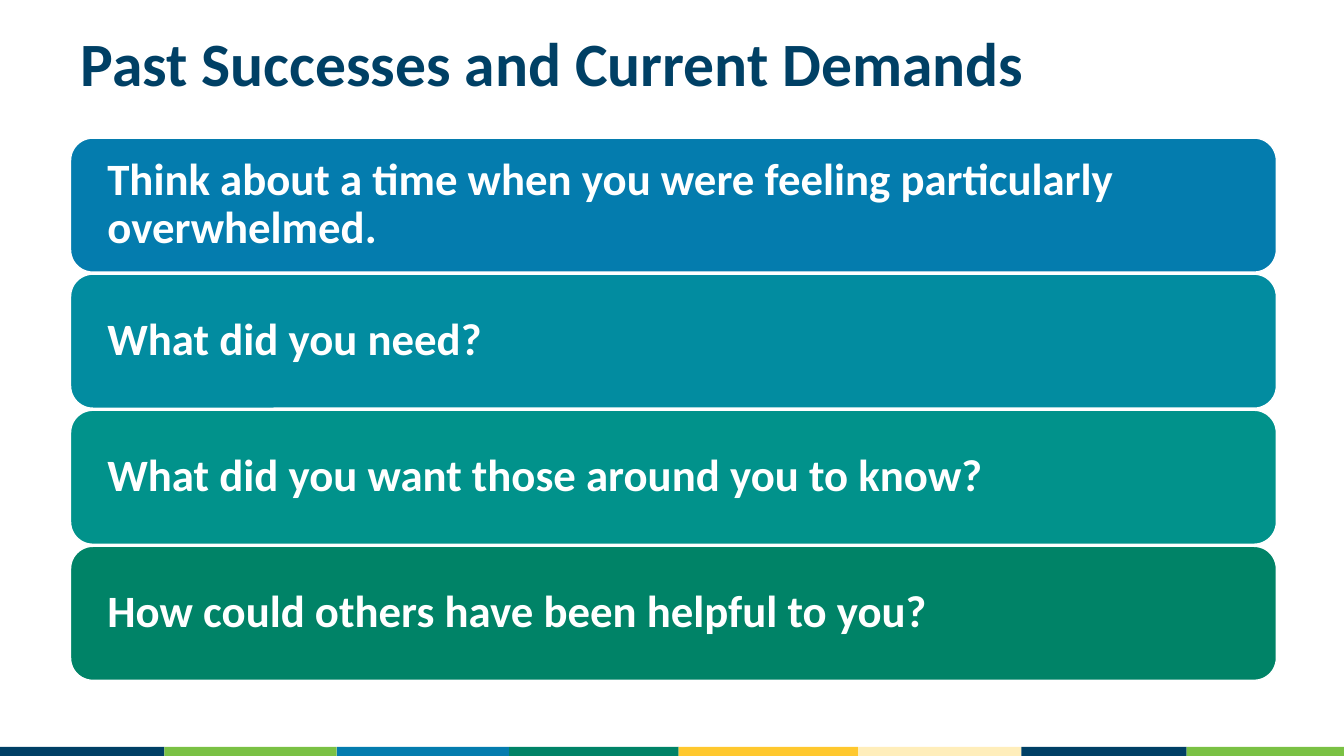
from dataclasses import dataclass

from pptx import Presentation
from pptx.dml.color import RGBColor
from pptx.enum.shapes import MSO_SHAPE
from pptx.enum.text import MSO_ANCHOR, PP_ALIGN
from pptx.util import Inches, Pt


@dataclass(frozen=True)
class Theme:
    font: str = "Calibri"
    title_size: int = 44
    prompt_size: int = 32
    navy: str = "004065"
    lime: str = "7AC144"
    blue: str = "047CAE"
    teal_blue: str = "028CA0"
    teal: str = "01928B"
    green: str = "008367"
    gold: str = "FFC82E"
    cream: str = "FFEEBB"
    white: str = "FFFFFF"


THEME = Theme()

PROMPTS = [
    ("Think about a time when you were feeling particularly overwhelmed.", THEME.blue),
    ("What did you need?", THEME.teal_blue),
    ("What did you want those around you to know?", THEME.teal),
    ("How could others have been helpful to you?", THEME.green),
]

STRIPES = [
    (0, THEME.navy),
    (1.63, THEME.lime),
    (3.34, THEME.blue),
    (5.05, THEME.green),
    (6.73, THEME.gold),
    (8.51, THEME.cream),
    (10.13, THEME.navy),
    (11.77, THEME.lime),
]


def write_text(sp, text, *, size, color, inset_x=0.1, inset_y=0.05):
    tf = sp.text_frame
    tf.word_wrap = True
    tf.vertical_anchor = MSO_ANCHOR.MIDDLE
    tf.margin_left = tf.margin_right = Inches(inset_x)
    tf.margin_top = tf.margin_bottom = Inches(inset_y)
    p = tf.paragraphs[0]
    p.alignment = PP_ALIGN.LEFT
    p.line_spacing = 0.9
    r = p.add_run()
    r.text = text
    r.font.name = THEME.font
    r.font.size = Pt(size)
    r.font.bold = True
    r.font.color.rgb = RGBColor.from_string(color)


def add_block(s, kind, left, top, width, height, fill, line=None):
    sp = s.shapes.add_shape(
        kind, Inches(left), Inches(top), Inches(width), Inches(height)
    )
    sp.shadow.inherit = False
    sp.fill.solid()
    sp.fill.fore_color.rgb = RGBColor.from_string(fill)
    if line:
        sp.line.color.rgb = RGBColor.from_string(line)
        sp.line.width = Pt(1)
    else:
        sp.line.fill.background()
    return sp


def add_footer_stripes(s, left, top, width, height):
    ends = [start for start, _ in STRIPES[1:]] + [width]
    for (start, color), end in zip(STRIPES, ends):
        add_block(s, MSO_SHAPE.RECTANGLE, left + start, top, end - start, height, color)


def add_title(s, left, top, width, height):
    sp = s.shapes.add_textbox(Inches(left), Inches(top), Inches(width), Inches(height))
    write_text(
        sp, "Past Successes and Current Demands", size=THEME.title_size, color=THEME.navy
    )


def add_prompts(s, left, top, width, height, gap=0.02):
    bar_height = (height - gap * (len(PROMPTS) - 1)) / len(PROMPTS)
    for i, (text, color) in enumerate(PROMPTS):
        sp = add_block(
            s,
            MSO_SHAPE.ROUNDED_RECTANGLE,
            left,
            top + i * (bar_height + gap),
            width,
            bar_height,
            color,
            line=THEME.white,
        )
        write_text(
            sp, text, size=THEME.prompt_size, color=THEME.white, inset_x=0.3, inset_y=0.13
        )


def main():
    prs = Presentation()
    prs.slide_width = Inches(13.33)
    prs.slide_height = Inches(7.5)
    s = prs.slides.add_slide(prs.slide_layouts[6])
    add_footer_stripes(s, 0, 7.41, 13.33, 0.1)
    add_title(s, 0.7, 0.28, 11.96, 0.76)
    add_prompts(s, 0.7, 1.37, 11.96, 5.38)
    prs.save("out.pptx")


if __name__ == "__main__":
    main()
